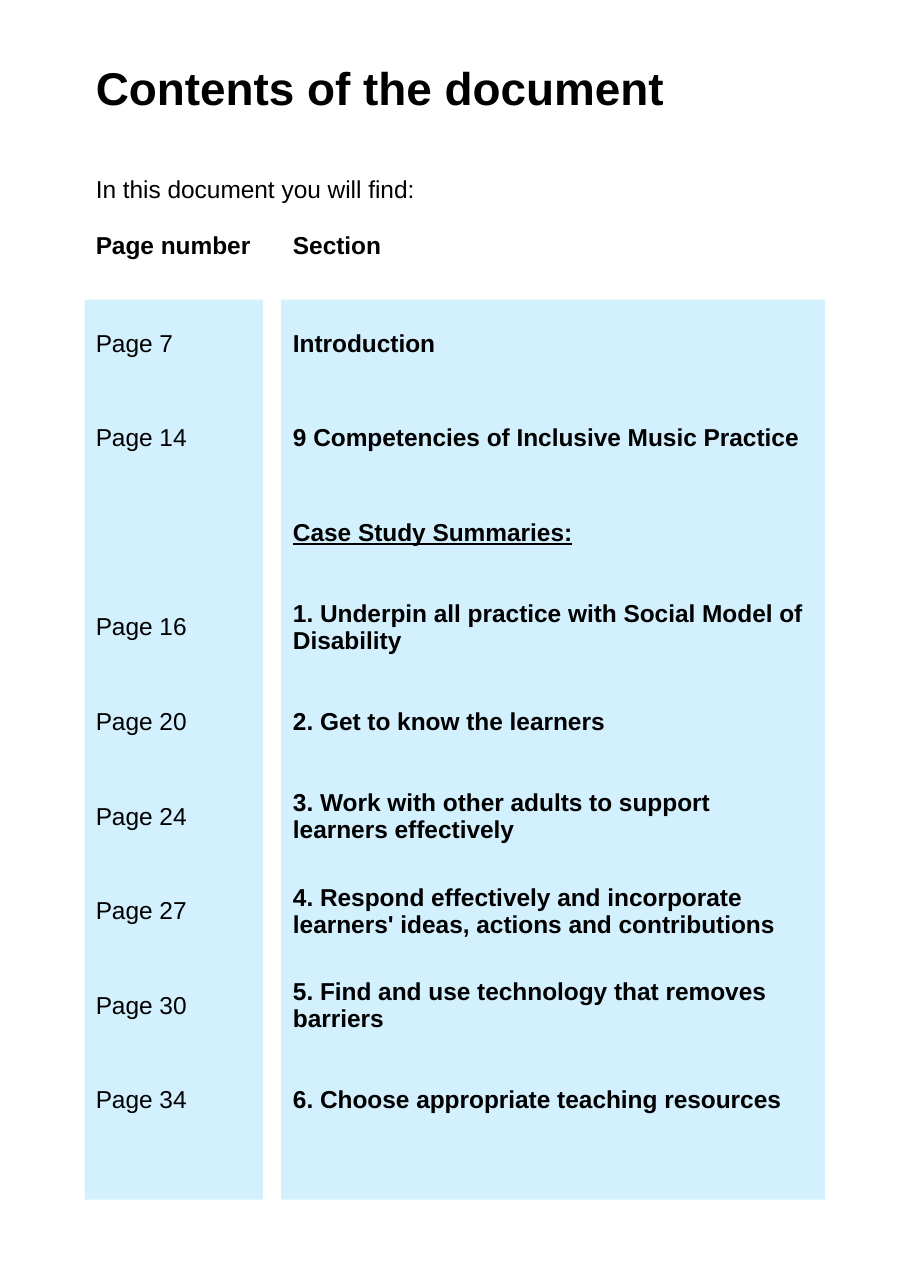
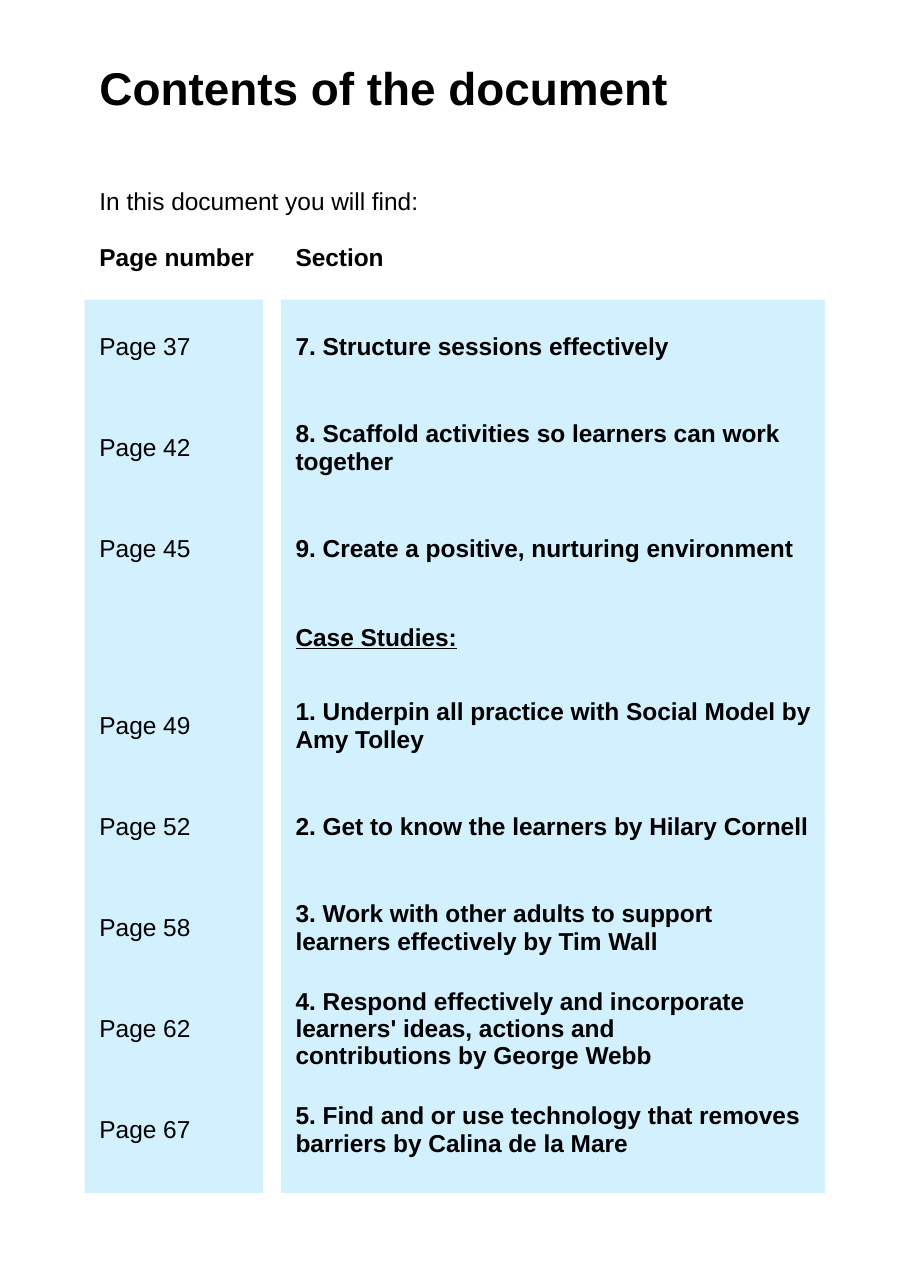
from pptx import Presentation
from pptx.dml.color import RGBColor
from pptx.enum.shapes import MSO_SHAPE
from pptx.enum.text import MSO_ANCHOR
from pptx.util import Pt

BLACK = RGBColor(0x00, 0x00, 0x00)
PALE_BLUE = RGBColor(0xD2, 0xF0, 0xFD)
FONT = "Arial"
TITLE_SIZE = 30
BODY_SIZE = 16
NO_STYLE_NO_GRID = "{2D5ABB26-0587-4C30-8999-92F81FD0307C}"

TITLE = "Contents of the document"
INTRODUCTION = "In this document you will find:"
HEADINGS = ("Page number", "Section")

TABLE_TOP = 38.2
BAND_TOP = 195.8
BANDS = ((55.4, 116.6), (183.6, 355.7))

SUMMARY_ENTRIES = [
    ("Page 7", "Introduction"),
    ("Page 14", "9 Competencies of Inclusive Music Practice"),
    ("", "Case Study Summaries:"),
    ("Page 16", "1. Underpin all practice with Social Model of Disability"),
    ("Page 20", "2. Get to know the learners"),
    ("Page 24", "3. Work with other adults to support learners effectively"),
    ("Page 27", "4. Respond effectively and incorporate learners' ideas, actions and contributions"),
    ("Page 30", "5. Find and use technology that removes barriers"),
    ("Page 34", "6. Choose appropriate teaching resources"),
]

CASE_STUDY_ENTRIES = [
    ("Page 37", "7. Structure sessions effectively"),
    ("Page 42", "8. Scaffold activities so learners can work together"),
    ("Page 45", "9. Create a positive, nurturing environment"),
    ("", "Case Studies:"),
    ("Page 49", "1. Underpin all practice with Social Model by Amy Tolley"),
    ("Page 52", "2. Get to know the learners by Hilary Cornell"),
    ("Page 58", "3. Work with other adults to support learners effectively by Tim Wall"),
    ("Page 62", "4. Respond effectively and incorporate learners' ideas, actions and\n"
                "contributions by George Webb"),
    ("Page 67", "5. Find and or use technology that removes barriers by Calina de la Mare"),
]


def add_bands(slide, height):
    for left, width in BANDS:
        band = slide.shapes.add_shape(
            MSO_SHAPE.RECTANGLE, Pt(left), Pt(BAND_TOP), Pt(width), Pt(height))
        band.shadow.inherit = False
        band.fill.solid()
        band.fill.fore_color.rgb = PALE_BLUE
        band.line.fill.background()


def write_cell(cell, text, size=BODY_SIZE, bold=False, underline=False, anchor=MSO_ANCHOR.TOP):
    cell.vertical_anchor = anchor
    cell.text_frame.text = text
    for paragraph in cell.text_frame.paragraphs:
        for run in paragraph.runs:
            run.font.name = FONT
            run.font.size = Pt(size)
            run.font.bold = bold
            run.font.underline = underline
            run.font.color.rgb = BLACK


def add_plain_table(slide, left, column_widths, row_heights):
    frame = slide.shapes.add_table(
        len(row_heights), len(column_widths), Pt(left), Pt(TABLE_TOP),
        Pt(sum(column_widths)), Pt(sum(row_heights)))
    table = frame.table
    table.first_row = False
    table.horz_banding = False
    table._tbl.tblPr.find("{*}tableStyleId").text = NO_STYLE_NO_GRID
    for column, width in zip(table.columns, column_widths):
        column.width = Pt(width)
    for row, height in zip(table.rows, row_heights):
        row.height = Pt(height)
    for cell in table.iter_cells():
        cell.fill.background()
    return table


def add_contents_slide(presentation, entries, band_height, left, column_widths,
                       heading_heights, entry_height, subheading_height):
    slide = presentation.slides.add_slide(presentation.slide_layouts[6])
    add_bands(slide, band_height)
    entry_heights = [entry_height if page else subheading_height for page, section in entries]
    table = add_plain_table(slide, left, column_widths, heading_heights + entry_heights)
    for row in range(2):
        table.cell(row, 0).merge(table.cell(row, 1))
    write_cell(table.cell(0, 0), TITLE, TITLE_SIZE, bold=True)
    write_cell(table.cell(1, 0), INTRODUCTION)
    for column, heading in enumerate(HEADINGS):
        write_cell(table.cell(2, column), heading, bold=True)
    for row, (page, section) in enumerate(entries, start=3):
        write_cell(table.cell(row, 0), page, anchor=MSO_ANCHOR.MIDDLE)
        write_cell(table.cell(row, 1), section, bold=True, underline=not page,
                   anchor=MSO_ANCHOR.MIDDLE)


def main():
    presentation = Presentation()
    presentation.slide_width = Pt(595.44)
    presentation.slide_height = Pt(841.68)
    add_contents_slide(
        presentation, SUMMARY_ENTRIES, band_height=588.2, left=55.4,
        column_widths=[128.9, 352.8], heading_heights=[73.8, 36.6, 45.2],
        entry_height=61.8, subheading_height=61.8)
    add_contents_slide(
        presentation, CASE_STUDY_ENTRIES, band_height=583.9, left=57.8,
        column_widths=[128.2, 351.4], heading_heights=[81.4, 36.8, 37.4],
        entry_height=66, subheading_height=49.8)
    presentation.save("out.pptx")


if __name__ == "__main__":
    main()
